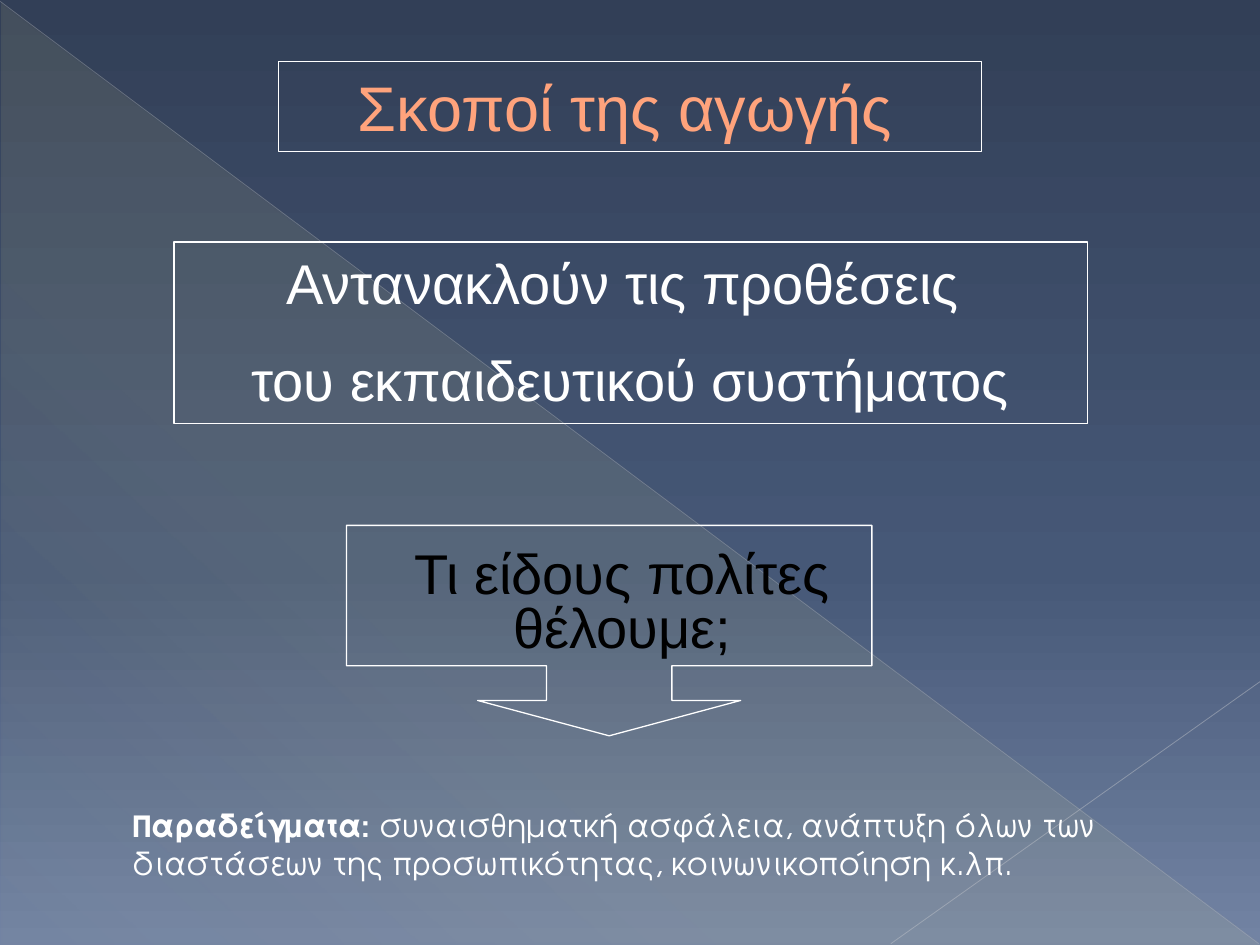
import pptx
import pptx.chart.data
import pptx.dml.color
import pptx.enum.dml
import pptx.enum.shapes
import pptx.enum.text
import pptx.oxml
import pptx.oxml.ns
import pptx.util
from lxml import etree

RGB = pptx.dml.color.RGBColor
SHAPE = pptx.enum.shapes.MSO_SHAPE
ALIGN = pptx.enum.text.PP_ALIGN
ANCHOR = pptx.enum.text.MSO_ANCHOR

WHITE = RGB(0xFF, 0xFF, 0xFF)
BLACK = RGB(0x00, 0x00, 0x00)
CORAL = RGB(0xFF, 0xA3, 0x7C)
RUST = RGB(0xB0, 0x5D, 0x26)
NAVY = RGB(0x32, 0x3F, 0x57)
SLATE = RGB(0x46, 0x58, 0x77)
HAZE = RGB(0x72, 0x83, 0xA3)
CREAM = RGB(0xFF, 0xF3, 0x9D)
SILVER = RGB(0xBA, 0xBD, 0xC4)
PEARL = RGB(0xC1, 0xC4, 0xCA)

COLUMNS, ROWS = 100, 75


def add_child(parent, tag, **attributes):
    child = etree.SubElement(parent, pptx.oxml.ns.qn(tag))
    for name, value in attributes.items():
        child.set(name, str(value))
    return child


def add_color(parent, color, opacity=100):
    node = add_child(parent, "a:srgbClr", val=color)
    if opacity < 100:
        add_child(node, "a:alpha", val=opacity * 1000)


def set_gradient(fill, parent, stops, angle):
    """Give a fill its stops of (position, colour, opacity), all in percent."""
    fill.gradient()
    gradient = next(parent.iter(pptx.oxml.ns.qn("a:gradFill")))
    for child in list(gradient):
        gradient.remove(child)
    stop_list = add_child(gradient, "a:gsLst")
    for position, color, opacity in stops:
        add_color(add_child(stop_list, "a:gs", pos=position * 1000), color, opacity)
    add_child(gradient, "a:lin", ang=angle * 60000, scaled=0)


class SlideBuilder:
    font = "Arial"
    outline = 0.75

    def __init__(self):
        self.deck = pptx.Presentation()
        self.deck.slide_width = pptx.util.Inches(10)
        self.deck.slide_height = pptx.util.Inches(7.5)
        self.page = self.deck.slides.add_slide(self.deck.slide_layouts[5])

    def x(self, columns):
        return round(self.deck.slide_width * columns / COLUMNS)

    def y(self, rows):
        return round(self.deck.slide_height * rows / ROWS)

    def place(self, left, top, width, height):
        return self.x(left), self.y(top), self.x(width), self.y(height)

    def background(self, stops):
        fill = self.page.background.fill
        set_gradient(fill, self.page.element, stops, 90)

    def shape(self, kind, area, adjustments=()):
        """Add an unfilled preset shape with a thin white outline."""
        shape = self.page.shapes.add_shape(kind, *self.place(*area))
        shape.shadow.inherit = False
        shape.fill.background()
        self.frame(shape)
        for index, value in enumerate(adjustments):
            shape.adjustments[index] = value
        return shape

    def frame(self, shape):
        shape.line.color.rgb = WHITE
        shape.line.width = pptx.util.Pt(self.outline)

    def glow(self, kind, area, stops, angle):
        shape = self.shape(kind, area)
        shape.line.fill.background()
        set_gradient(shape.fill, shape.element.spPr, stops, angle)

    def line(self, start, end, color, width, opacity):
        line = self.page.shapes.add_connector(
            pptx.enum.shapes.MSO_CONNECTOR.STRAIGHT,
            self.x(start[0]), self.y(start[1]), self.x(end[0]), self.y(end[1]))
        line.line.color.rgb = color
        line.line.width = pptx.util.Pt(width)
        properties = line.element.spPr
        color_node = next(properties.iter(pptx.oxml.ns.qn("a:srgbClr")))
        add_child(color_node, "a:alpha", val=opacity * 1000)
        add_child(properties, "a:effectLst")

    def span(self, para, text, size, color, bold=False, font=None):
        span = para.add_run()
        span.text = text
        span.font.name = font or self.font
        span.font.size = pptx.util.Pt(size)
        span.font.bold = bold
        span.font.color.rgb = color
        return span

    def title(self, area, text, indent):
        box = self.page.shapes.title
        box.left, box.top, box.width, box.height = self.place(*area)
        box.element.getparent().append(box.element)
        self.frame(box)
        box.text_frame.auto_size = pptx.enum.text.MSO_AUTO_SIZE.NONE
        box.text_frame.vertical_anchor = ANCHOR.MIDDLE
        para = box.text_frame.paragraphs[0]
        para.alignment = ALIGN.LEFT
        para_properties = para.runs or para._p.get_or_add_pPr()
        para_properties.set("marL", str(self.x(indent)))
        para_properties.set("indent", "0")
        span = self.span(para, text, 36, CORAL)
        edge = pptx.oxml.parse_xml(
            f'<a:ln {pptx.oxml.ns.nsdecls("a")} w="6350"><a:solidFill/></a:ln>')
        add_color(edge[0], RUST)
        span.font._element.insert(0, edge)

    def text(self, area, lines, size, color, align=ALIGN.LEFT, spacing=1,
             before=0, font=None, framed=False):
        """Add lines of text, each a list of (words, bold)."""
        box = self.page.shapes.add_textbox(*self.place(*area))
        if framed:
            self.frame(box)
        frame = box.text_frame
        frame.word_wrap = True
        for index, spans in enumerate(lines):
            para = frame.add_paragraph() if index else frame.paragraphs[0]
            para.alignment = align
            para.line_spacing = spacing
            if index:
                para.space_before = pptx.util.Pt(before)
            for words, bold in spans:
                self.span(para, words, size, color, bold, font)

    def save(self):
        self.deck.save("out.pptx")


def main():
    slide = SlideBuilder()
    slide.background([(0, NAVY, 100), (60, SLATE, 100), (100, HAZE, 100)])
    slide.glow(SHAPE.RIGHT_TRIANGLE, (0.1, 0.2, 99.9, 74.8),
               [(0, CREAM, 10), (70, CREAM, 8), (100, CREAM, 1)], 133)
    slide.line((0, 0.1), (99.9, 74.9), SILVER, 0.39, 35)
    slide.line((100, 54.1), (70.7, 74.9), PEARL, 0.47, 45)

    slide.shape(SHAPE.DOWN_ARROW_CALLOUT, (27.5, 41.7, 41.7, 16.7),
                (0.596, 0.625, 0.168, 0.667))
    slide.title((22.1, 4.9, 55.8, 7.1), "Σκοποί της αγωγής", 5.3)
    slide.text((27.9, 43.3, 44.2, 9.5),
               [[("Τι είδους πολίτες ", False)], [("θέλουμε; ", False)]],
               32, BLACK, ALIGN.CENTER, spacing=0.8)
    slide.text((13.8, 19.2, 72.5, 14.4),
               [[("Αντανακλούν τις προθέσεις ", False)],
                [("του εκπαιδευτικού συστήματος", False)]],
               32, WHITE, ALIGN.CENTER, before=17, framed=True)
    slide.text((9.5, 63.5, 80.9, 7.1),
               [[("Παραδείγματα: ", True),
                 ("συναισθηματκή ασφάλεια, ανάπτυξη όλων των", False)],
                [("διαστάσεων της προσωπικότητας, κοινωνικοποίηση κ.λπ.", False)]],
               18, WHITE, font="TeX Gyre Adventor")
    slide.save()


if __name__ == "__main__":
    main()
